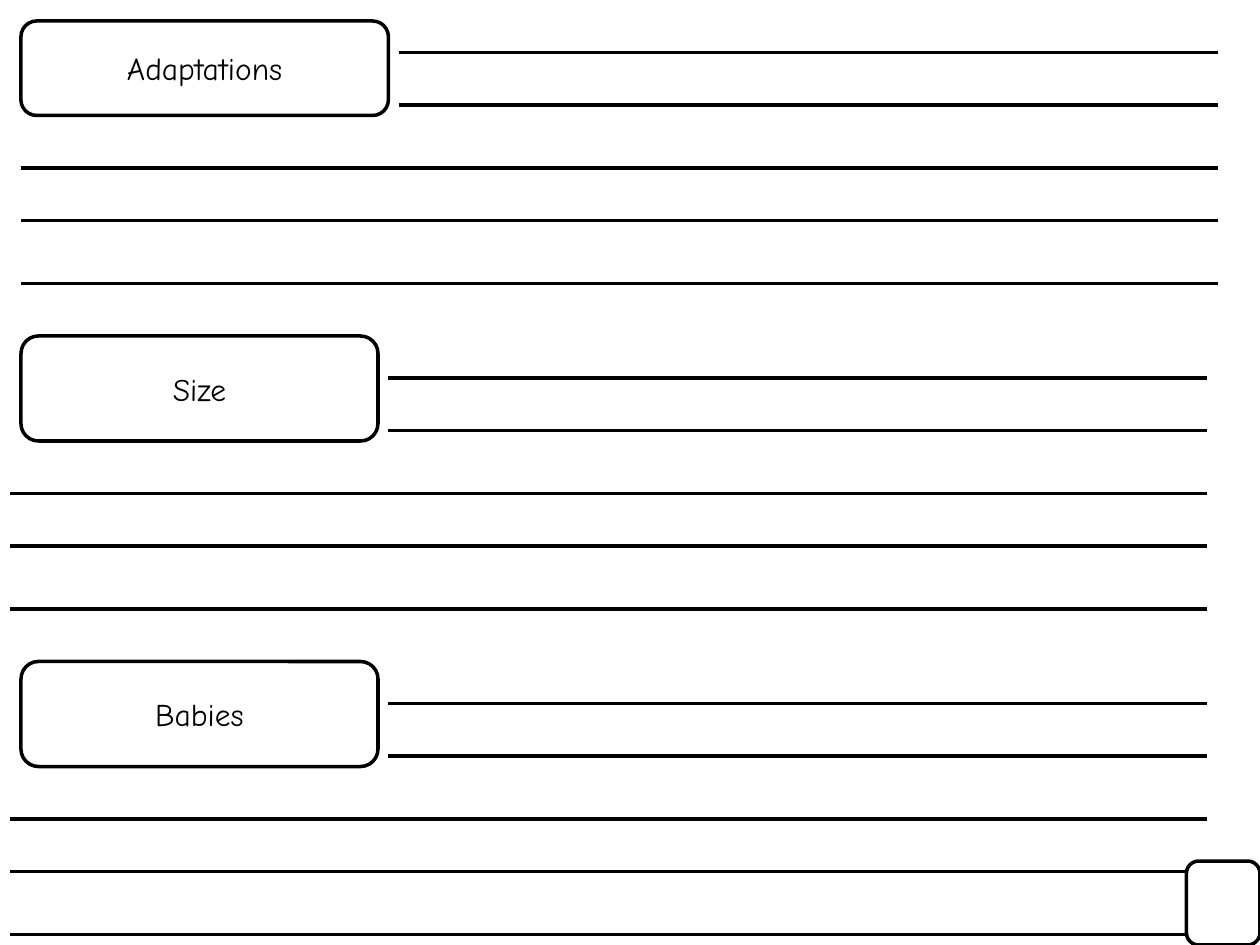
from pptx import Presentation
from pptx.dml.color import RGBColor
from pptx.enum.shapes import MSO_CONNECTOR as Conn, MSO_SHAPE as Shape
from pptx.enum.text import MSO_ANCHOR as Anchor, PP_ALIGN as Align
from pptx.oxml.ns import qn
from pptx.util import Pt
from lxml.etree import SubElement

PX = 9525  # EMU per px, 96 px to the inch
INK = {"black": "000000", "white": "FFFFFF"}
FONT = "Comic Neue"
STEPS = (0, 40, 88, 128, 176)  # writing lines, down from the first
SHORT = 2  # lines that start beside the label
INDENT = 288  # start of the short lines

# label, label box, then left, top and width of the writing lines
TOPICS = [
    ("Adaptations", (16, 16, 280, 72), (16, 40, 912)),
    ("Size", (16, 256, 272, 80), (8, 288, 912)),
    ("Babies", (16, 504, 272, 80), (8, 536, 912)),
]
CORNER = (904, 656, 56, 64)


def color(name):
    return RGBColor.from_string(INK[name])


def add_box(slide, box, text=""):
    shape = slide.shapes.add_shape(Shape.ROUNDED_RECTANGLE, *(n * PX for n in box))
    shape.shadow.inherit = False
    shape.fill.solid()
    shape.fill.fore_color.rgb = color("white")
    shape.line.color.rgb = color("black")
    shape.line.width = Pt(2)
    if text:
        frame = shape.text_frame
        frame.text = text
        frame.vertical_anchor = Anchor.MIDDLE
        para = frame.paragraphs[0]
        para.alignment = Align.CENTER
        font = para.runs[0].font
        font.name, font.size = FONT, Pt(18)
        font.color.rgb = color("black")


def add_rule(slide, left, right, y):
    rule = slide.shapes.add_connector(
        Conn.STRAIGHT, left * PX, y * PX, right * PX, y * PX)
    rule.line.color.rgb = color("black")
    rule.line.width = Pt(2.25)
    SubElement(rule._element.spPr, qn("a:effectLst"))


def add_topic(slide, text, box, area):
    add_box(slide, box, text)
    left, top, width = area
    for i, step in enumerate(STEPS):
        start = left + INDENT if i < SHORT else left
        add_rule(slide, start, left + width, top + step)


def main():
    prs = Presentation()
    prs.slide_width, prs.slide_height = 960 * PX, 720 * PX
    slide = prs.slides.add_slide(prs.slide_layouts[6])

    # Topics with their writing lines
    for topic in TOPICS:
        add_topic(slide, *topic)

    # Empty box in the corner, over the last lines
    add_box(slide, CORNER)
    prs.save("out.pptx")


if __name__ == "__main__":
    main()
